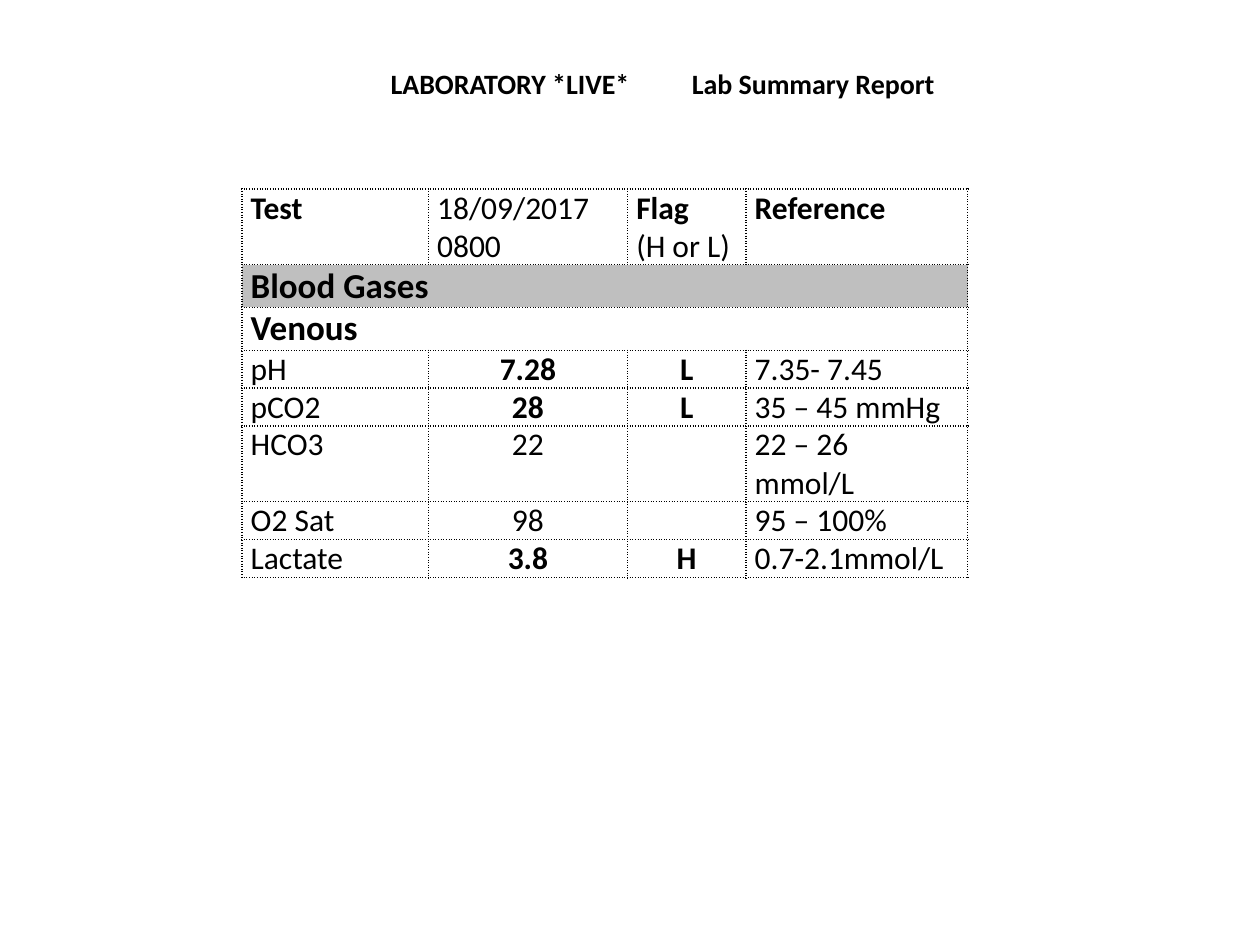
"""Build the venous blood gas lab summary slide."""
from dataclasses import dataclass

from lxml import etree
from pptx import Presentation
from pptx.dml.color import RGBColor
from pptx.enum import text
from pptx.oxml import ns
from pptx.util import Inches, Pt

COLOURS = {"ink": "000000", "paper": "FFFFFF", "band": "BFBFBF"}
FONT = "Calibri"
COLUMN_WIDTHS = (1.48, 1.58, 0.94, 1.76)
TABLE_LEFT, TABLE_TOP = 1.92, 1.5
LINE_HEIGHT, SECTION_HEIGHT = 0.3, 0.34
TAB_POSITION = 2.39


@dataclass(frozen=True)
class Line:
    """One paragraph of a cell."""

    wording: str
    bold: bool = False
    size: int = 18


@dataclass(frozen=True)
class Section:
    """A heading that spans the table."""

    name: str
    fill: str


@dataclass(frozen=True)
class Result:
    """One test with its value, flag and reference range."""

    test: str
    value: str
    flag: str
    reference: str


HEADER = (
    (Line("Test", True),),
    (Line("18/09/2017"), Line("0800")),
    (Line("Flag", True), Line("(H or L)")),
    (Line("Reference", True),),
)
SECTIONS = (Section("Blood Gases", "band"), Section("Venous", "paper"))
RESULTS = (
    Result("pH", "7.28", "L", "7.35- 7.45"),
    Result("pCO2", "28", "L", "35 – 45 mmHg"),
    Result("HCO3", "22", "", "22 – 26\nmmol/L"),
    Result("O2 Sat", "98", "", "95 – 100%"),
    Result("Lactate", "3.8", "H", "0.7-2.1mmol/L"),
)


def add_text(paragraph, line: Line) -> None:
    """Add the wording run by run, with a break at each newline."""
    for index, part in enumerate(line.wording.split("\n")):
        if index:
            paragraph.add_line_break()
        run = paragraph.add_run()
        run.text = part
        run.font.name = FONT
        run.font.size = Pt(line.size)
        run.font.bold = line.bold
        run.font.color.rgb = RGBColor.from_string(COLOURS["ink"])


def add_title(slide) -> None:
    """Place the report heading with a tab between its two parts."""
    title = slide.shapes.title
    title.left, title.top = Inches(3), Inches(0.48)
    title.width, title.height = Inches(5), Inches(0.37)
    frame = title.text_frame
    frame.word_wrap = True
    frame.auto_size = text.MSO_AUTO_SIZE.SHAPE_TO_FIT_TEXT
    frame.vertical_anchor = text.MSO_ANCHOR.TOP
    paragraph = frame.paragraphs[0]
    paragraph.alignment = text.PP_ALIGN.LEFT
    properties = paragraph._p.get_or_add_pPr()
    stops = etree.SubElement(properties, ns.qn("a:tabLst"))
    etree.SubElement(stops, ns.qn("a:tab"), pos=str(Inches(TAB_POSITION)), algn="l")
    add_text(paragraph, Line("LABORATORY *LIVE*\tLab Summary Report", True, 16))


def style_cell(cell, fill: str) -> None:
    """Give a cell dotted borders, tight margins and a fill."""
    cell.margin_left = cell.margin_right = Inches(0.07)
    cell.margin_top = cell.margin_bottom = 0
    properties = cell._tc.get_or_add_tcPr()
    for side in ("lnL", "lnR", "lnT", "lnB"):
        border = etree.SubElement(properties, ns.qn(f"a:{side}"), w=str(Pt(1)))
        solid = etree.SubElement(border, ns.qn("a:solidFill"))
        etree.SubElement(solid, ns.qn("a:srgbClr"), val=COLOURS["ink"])
        etree.SubElement(border, ns.qn("a:prstDash"), val="sysDot")
    cell.fill.solid()
    cell.fill.fore_color.rgb = RGBColor.from_string(COLOURS[fill])


def fill_cell(cell, lines: tuple[Line, ...], centred: bool = False) -> None:
    """Write one paragraph per line into a cell."""
    for index, line in enumerate(lines):
        frame = cell.text_frame
        paragraph = frame.add_paragraph() if index else frame.paragraphs[0]
        paragraph.alignment = text.PP_ALIGN.CENTER if centred else text.PP_ALIGN.LEFT
        if line.wording:
            add_text(paragraph, line)


def add_results_table(slide) -> None:
    """Draw the header, the section headings and the results."""
    heights = [2 * LINE_HEIGHT] + [SECTION_HEIGHT] * len(SECTIONS)
    heights += [LINE_HEIGHT * len(result.reference.split("\n")) for result in RESULTS]
    table = slide.shapes.add_table(
        len(heights), len(COLUMN_WIDTHS), Inches(TABLE_LEFT), Inches(TABLE_TOP),
        Inches(sum(COLUMN_WIDTHS)), Inches(sum(heights)),
    ).table
    table.first_row = table.horz_banding = False
    for column, width in zip(table.columns, COLUMN_WIDTHS):
        column.width = Inches(width)
    for row, height in zip(table.rows, heights):
        row.height = Inches(height)

    fills = ["paper"] + [section.fill for section in SECTIONS] + ["paper"] * len(RESULTS)
    for row, fill in zip(table.rows, fills):
        for cell in row.cells:
            style_cell(cell, fill)

    for column, lines in enumerate(HEADER):
        fill_cell(table.cell(0, column), lines)
    for row, section in enumerate(SECTIONS, 1):
        heading = table.cell(row, 0)
        heading.merge(table.cell(row, len(COLUMN_WIDTHS) - 1))
        fill_cell(heading, (Line(section.name, True, 20),))
    for row, result in enumerate(RESULTS, 1 + len(SECTIONS)):
        abnormal = bool(result.flag)
        fill_cell(table.cell(row, 0), (Line(result.test),))
        fill_cell(table.cell(row, 1), (Line(result.value, abnormal),), True)
        fill_cell(table.cell(row, 2), (Line(result.flag, abnormal),), True)
        fill_cell(table.cell(row, 3), (Line(result.reference),))


def main() -> None:
    """Build and save the presentation."""
    presentation = Presentation()
    presentation.slide_width, presentation.slide_height = Inches(10), Inches(7.5)
    slide = presentation.slides.add_slide(presentation.slide_layouts[5])
    add_title(slide)
    add_results_table(slide)
    presentation.save("out.pptx")


if __name__ == "__main__":
    main()
